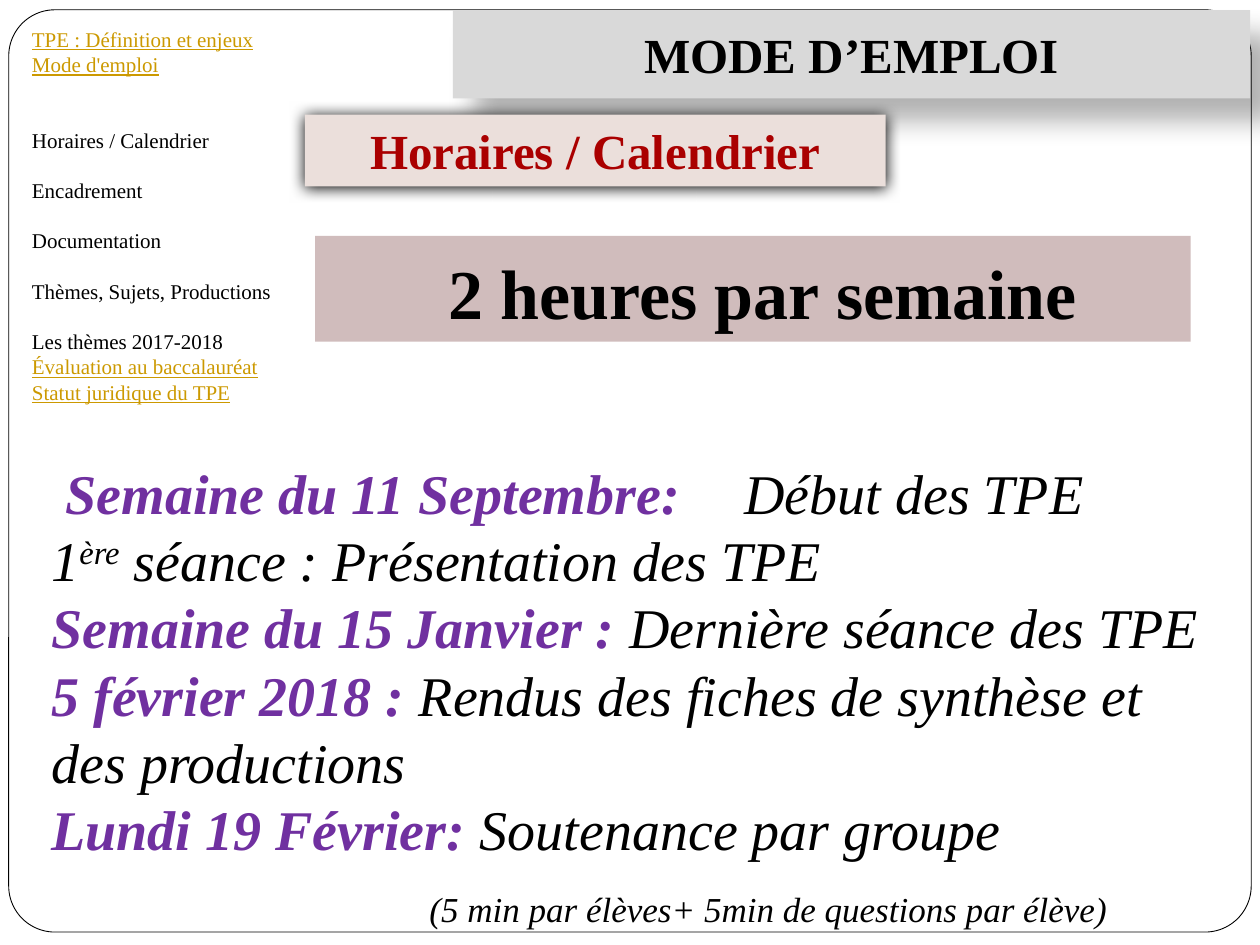
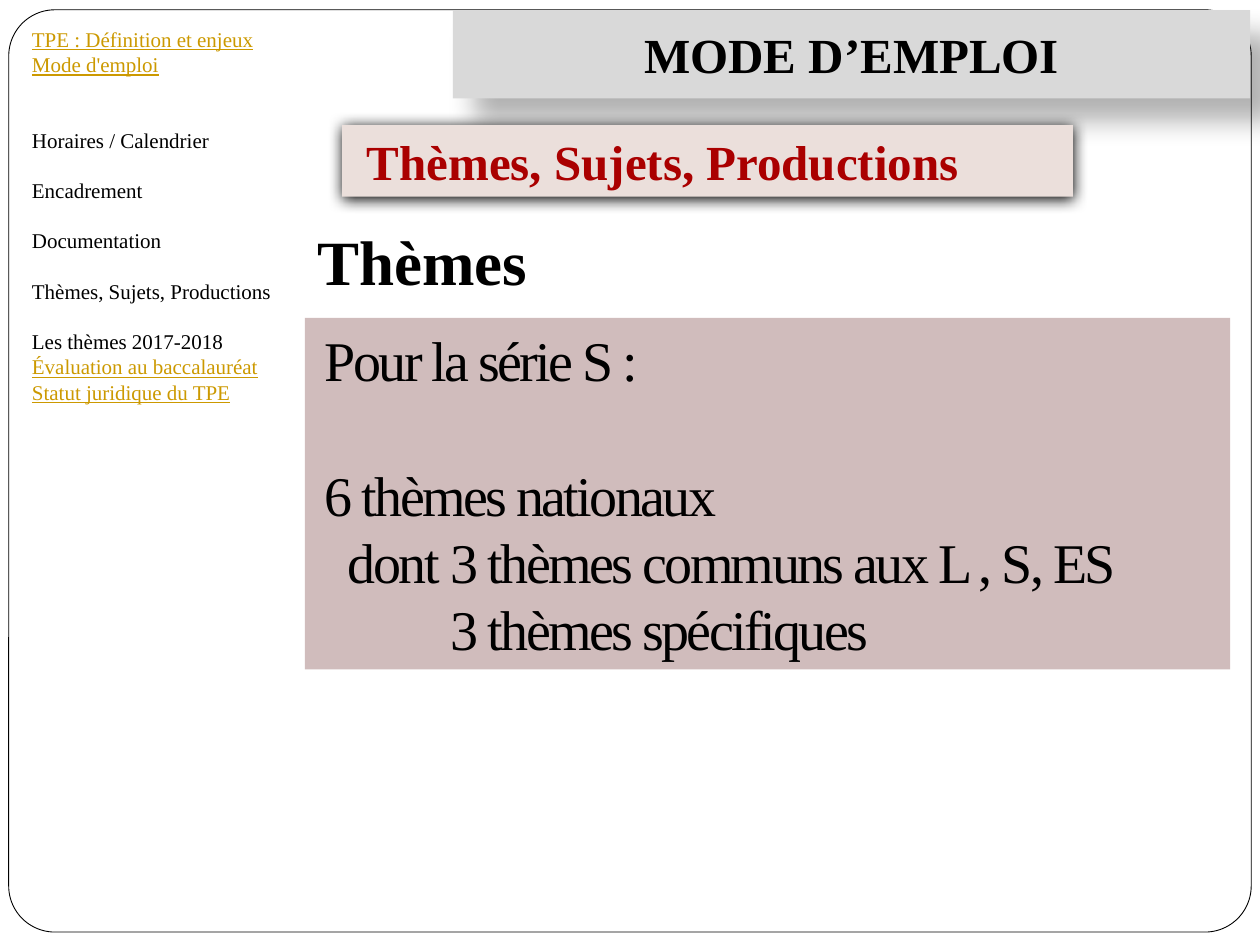
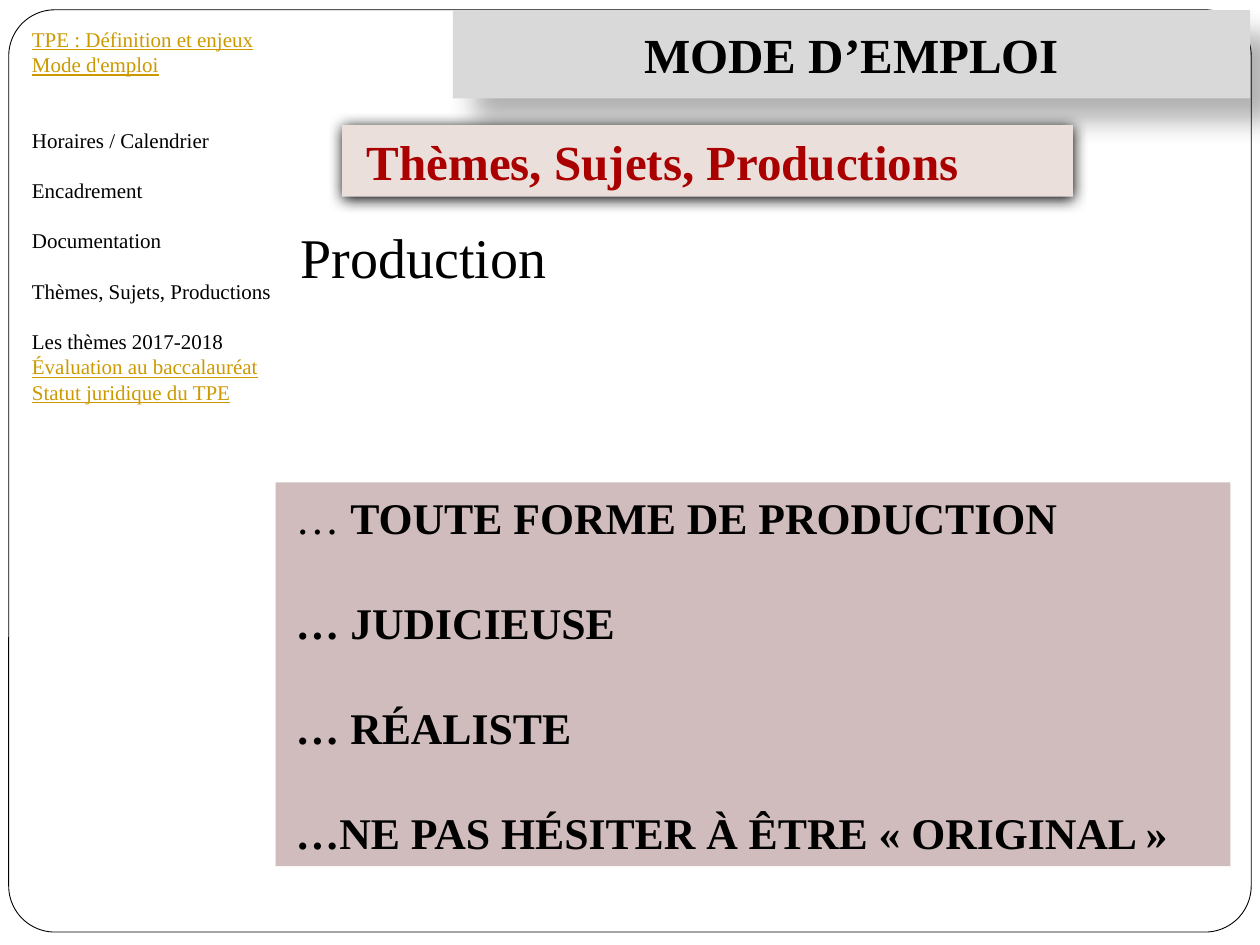
from lxml.etree import SubElement
from pptx import Presentation
from pptx.dml.color import RGBColor
from pptx.enum.shapes import MSO_SHAPE
from pptx.enum.text import MSO_ANCHOR, PP_ALIGN
from pptx.oxml.ns import qn
from pptx.util import Pt

FONT = "Times New Roman"
LINE_FACTOR = 1.2
WHITE = RGBColor(0xFF, 0xFF, 0xFF)
BLACK = RGBColor(0x00, 0x00, 0x00)
GREY = RGBColor(0xD9, 0xD9, 0xD9)
ROSE = RGBColor(0xD0, 0xBC, 0xBC)
PALE_ROSE = RGBColor(0xEB, 0xDF, 0xDB)
RED = RGBColor(0xAA, 0x00, 0x00)
PURPLE = RGBColor(0x70, 0x30, 0xA0)
GOLD = RGBColor(0xCC, 0x99, 0x00)

LINK = {"color": GOLD, "underline": True}
DATE = {"color": PURPLE, "bold": True}
TITLE = {"size": 28, "bold": True}
SUBTITLE = {"size": 28, "bold": True, "color": RED}
BANNER_SHADOW = {"alpha": 30, "blur": 15, "distance": 18, "angle": 45}
SUBTITLE_SHADOW = {"alpha": 100, "blur": 8.5, "distance": 1, "angle": 90}
PANEL_INSET = 11.5

# Each menu entry: text, format, empty lines above it
MENU = [
    ("TPE : Définition et enjeux", LINK, 0),
    ("Mode d'emploi", LINK, 0),
    ("Horaires / Calendrier", {}, 2),
    ("Encadrement", {}, 1),
    ("Documentation", {}, 1),
    ("Thèmes, Sujets, Productions", {}, 1),
    ("Les thèmes 2017-2018", {}, 1),
    ("Évaluation au baccalauréat", LINK, 0),
    ("Statut juridique du TPE", LINK, 0),
]


def line(*spans, gap=0, margin=0, indent=0):
    """Describe a paragraph: (text, format) spans, empty lines above, indents in points."""
    return {"spans": spans, "gap": gap, "margin": margin, "indent": indent}


def add_span(para, text, style):
    span = para.add_run()
    span.text = text
    values = {"name": FONT, "size": 12, "color": BLACK, **style}
    for name, value in values.items():
        if name == "color":
            span.font.color.rgb = value
        elif name in ("spc", "baseline"):
            span.font._element.set(name, str(value))
        else:
            setattr(span.font, name, Pt(value) if name == "size" else value)


def write(box, lines, style, align=PP_ALIGN.LEFT, anchor=MSO_ANCHOR.TOP, left_inset=7.2):
    """Fill a box with paragraphs that share a base style."""
    frame = box.text_frame
    settings = {
        "word_wrap": True,
        "vertical_anchor": anchor,
        "margin_left": Pt(left_inset),
        "margin_right": Pt(7.2),
        "margin_top": Pt(3.6),
        "margin_bottom": Pt(3.6),
    }
    for name, value in settings.items():
        setattr(frame, name, value)
    pitch = style["size"] * LINE_FACTOR
    for number, content in enumerate(lines):
        para = frame.add_paragraph() if number else frame.paragraphs[0]
        para.alignment = align
        para.line_spacing = Pt(pitch)
        para.space_before = Pt(content["gap"] * pitch)
        properties = para._p.get_or_add_pPr()
        properties.set("marL", str(Pt(content["margin"])))
        properties.set("indent", str(Pt(content["indent"])))
        for text, extra in content["spans"]:
            add_span(para, text, {**style, **extra})


def add_shadow(shape, alpha, blur, distance, angle):
    effects = shape._element.spPr.find(qn("a:effectLst"))
    shadow = SubElement(effects, qn("a:outerShdw"), {
        "blurRad": str(Pt(blur)),
        "dist": str(Pt(distance)),
        "dir": str(angle * 60000),
        "algn": "tl",
        "rotWithShape": "0",
    })
    color = SubElement(shadow, qn("a:srgbClr"), val=str(BLACK))
    SubElement(color, qn("a:alpha"), val=str(alpha * 1000))


def add_panel(page, place, fill, shadow=None, kind=MSO_SHAPE.RECTANGLE):
    panel = page.shapes.add_shape(kind, *map(Pt, place))
    panel.shadow.inherit = False
    panel.fill.solid()
    panel.fill.fore_color.rgb = fill
    panel.line.fill.background()
    if shadow:
        add_shadow(panel, **shadow)
    return panel


def add_text(page, place, lines, style):
    write(page.shapes.add_textbox(*map(Pt, place)), lines, style)


def add_page(deck):
    """Add a page with the frame, title banner and menu that all pages share."""
    page = deck.slides.add_slide(deck.slide_layouts[6])
    frame = add_panel(page, (5, 5.6, 710, 527), WHITE, kind=MSO_SHAPE.ROUNDED_RECTANGLE)
    frame.adjustments[0] = 0.05
    frame.line.color.rgb = BLACK
    frame.line.width = Pt(0.5)
    banner = add_panel(page, (258.8, 5.8, 455.6, 50.4), GREY, BANNER_SHADOW)
    write(banner, [line(("MODE D’EMPLOI", {}))], TITLE, PP_ALIGN.CENTER, MSO_ANCHOR.MIDDLE)
    menu = [line((text, style), gap=gap) for text, style, gap in MENU]
    add_text(page, (11.2, 11.5, 152, 225.4), menu, {"size": 12})
    return page


def add_subtitle(page, place, text, align=PP_ALIGN.LEFT, indent=0):
    box = add_panel(page, place, PALE_ROSE, SUBTITLE_SHADOW)
    write(box, [line((text, {}), indent=indent)], SUBTITLE, align)


def add_topic_subtitle(page):
    add_subtitle(page, (195.5, 71.5, 417.6, 41), "Thèmes, Sujets, Productions", indent=7)


def add_content(page, place, lines, style):
    write(add_panel(page, place, ROSE), lines, style,
          anchor=MSO_ANCHOR.MIDDLE, left_inset=PANEL_INSET)


def build_calendar(deck):
    page = add_page(deck)
    hours = add_panel(page, (180, 134.8, 500.4, 60.5), ROSE)
    write(hours, [line((" ", {}), ("2 heures par semaine", {"size": 40}))],
          {"size": 44, "bold": True}, PP_ALIGN.CENTER, MSO_ANCHOR.MIDDLE)
    add_subtitle(page, (174.2, 65.6, 332, 41), "Horaires / Calendrier", PP_ALIGN.CENTER)
    add_text(page, (22.3, 258.5, 675.4, 278.6), [
        line(("Semaine du 11 Septembre: \t", DATE), ("Début des TPE", {}), indent=8),
        line(("1", {}), ("ère", {"baseline": 30000}), (" séance : Présentation des TPE", {})),
        line(("Semaine du 15 Janvier : ", DATE), ("Dernière séance des TPE", {})),
        line(("5 février 2018 : ", DATE),
             ("Rendus des fiches de synthèse et des productions", {})),
        line(("Lundi 19 Février: ", DATE), ("Soutenance par groupe", {})),
        line(("(5 min par élèves+ 5min de questions par élève)", {"size": 20}), margin=216),
    ], {"size": 32, "italic": True})


def build_themes(deck):
    page = add_page(deck)
    add_content(page, (174.2, 181.6, 528.8, 201), [
        line(("Pour la série S :", {})),
        line(("6 thèmes nationaux", {}), gap=1),
        line(("dont \t3 thèmes communs aux L , S, ES", {}), indent=13),
        line(("3 thèmes spécifiques", {}), margin=72),
    ], {"size": 32, "spc": -150})
    add_topic_subtitle(page)
    add_text(page, (174.2, 123.8, 140, 51), [line(("Thèmes", {}))],
             {"size": 36, "bold": True})


def build_production(deck):
    page = add_page(deck)
    add_content(page, (157.5, 275.6, 545.6, 219.4), [
        line(("… ", {"bold": False}), ("TOUTE FORME DE PRODUCTION", {})),
        line(("… JUDICIEUSE", {}), gap=1),
        line(("… RÉALISTE", {}), gap=1),
        line(("…NE PAS HÉSITER À ÊTRE « ORIGINAL »", {}), gap=1),
    ], {"size": 25, "bold": True})
    add_topic_subtitle(page)
    add_text(page, (164.6, 123.8, 313, 46), [line(("Production", {}))], {"size": 32})


def main():
    deck = Presentation()
    deck.slide_width, deck.slide_height = Pt(720), Pt(540)
    for build in (build_calendar, build_themes, build_production):
        build(deck)
    deck.save("out.pptx")


if __name__ == "__main__":
    main()
